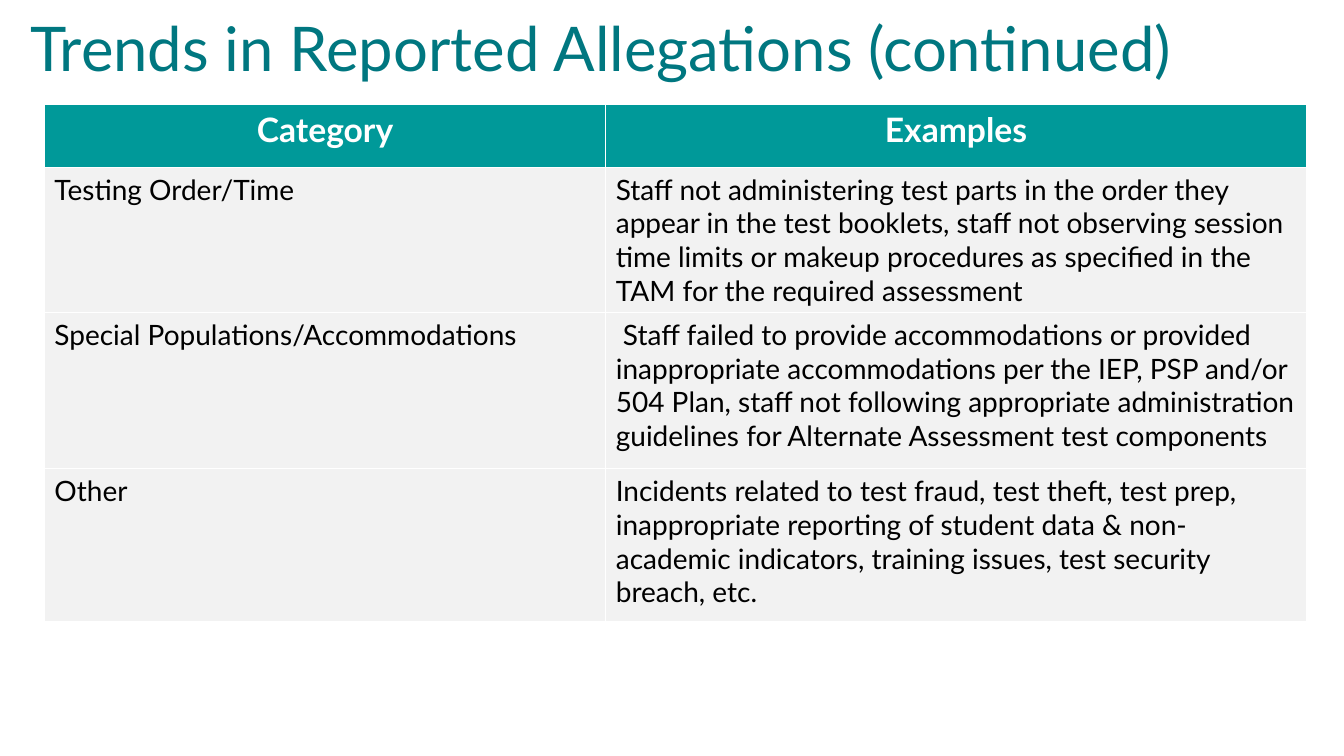
from pptx import Presentation
from pptx.dml.color import RGBColor
from pptx.enum.text import MSO_ANCHOR, MSO_AUTO_SIZE, PP_ALIGN
from pptx.util import Pt

DEEP_TEAL = RGBColor(0x00, 0x77, 0x80)
TEAL = RGBColor(0x00, 0x99, 0x99)
PALE_GREY = RGBColor(0xF2, 0xF2, 0xF2)
WHITE = RGBColor(0xFF, 0xFF, 0xFF)
BLACK = RGBColor(0x00, 0x00, 0x00)

HEADINGS = ("Category", "Examples")
ALLEGATIONS = [
    ("Testing Order/Time",
     "Staff not administering test parts in the order they appear in the test "
     "booklets, staff not observing session time limits or makeup procedures "
     "as specified in the TAM for the required assessment"),
    ("Special Populations/Accommodations",
     " Staff failed to provide accommodations or provided inappropriate "
     "accommodations per the IEP, PSP and/or 504 Plan, staff not following "
     "appropriate administration guidelines for Alternate Assessment test "
     "components"),
    ("Other",
     "Incidents related to test fraud, test theft, test prep, inappropriate "
     "reporting of student data & non-academic indicators, training issues, "
     "test security breach, etc."),
]
COLUMN_WIDTHS = (401, 500.4)
ROW_HEIGHTS = (44.6, 87.8, 111.6, 109.4)

TITLE_FONT = {"name": "Lato", "size": Pt(44), "bold": False}
HEADING_FONT = {"name": "Lato", "size": Pt(24), "bold": True}
BODY_FONT = {"name": "Lato", "size": Pt(20), "bold": False}


def apply(target, values):
    """Set every attribute in values on the target."""
    for attribute, value in values.items():
        setattr(target, attribute, value)


def write(paragraph, words, font, color, align):
    """Fill a paragraph with one formatted run."""
    paragraph.alignment = align
    run = paragraph.add_run()
    run.text = words
    apply(run.font, font)
    run.font.color.rgb = color


def add_title(slide, words):
    """Place and format the title placeholder."""
    title = slide.shapes.title
    apply(title, {"left": Pt(14.4), "top": Pt(10.8),
                  "width": Pt(974.2), "height": Pt(51.8)})
    apply(title.text_frame, {"vertical_anchor": MSO_ANCHOR.MIDDLE,
                             "word_wrap": True,
                             "auto_size": MSO_AUTO_SIZE.NONE})
    heading = title.text_frame.paragraphs[0]
    heading.line_spacing = 0.9
    write(heading, words, TITLE_FONT, DEEP_TEAL, PP_ALIGN.LEFT)


def fill_row(row, texts, fill, font, color, align):
    """Write one table row in a single style."""
    for cell, words in zip(row.cells, texts):
        cell.fill.solid()
        cell.fill.fore_color.rgb = fill
        write(cell.text_frame.paragraphs[0], words, font, color, align)


def add_allegations(slide):
    """Add the table of allegation categories and examples."""
    frame = slide.shapes.add_table(
        len(ROW_HEIGHTS), len(COLUMN_WIDTHS), Pt(31.7), Pt(74.9),
        Pt(sum(COLUMN_WIDTHS)), Pt(sum(ROW_HEIGHTS)))
    table = frame.table
    table.horz_banding = False
    for column, width in zip(table.columns, COLUMN_WIDTHS):
        column.width = Pt(width)
    for row, height in zip(table.rows, ROW_HEIGHTS):
        row.height = Pt(height)
    frame.height = Pt(368.6)
    header, *body = table.rows
    fill_row(header, HEADINGS, TEAL, HEADING_FONT, WHITE, PP_ALIGN.CENTER)
    for row, allegation in zip(body, ALLEGATIONS):
        fill_row(row, allegation, PALE_GREY, BODY_FONT, BLACK, PP_ALIGN.LEFT)


def main():
    """Build and save the slide."""
    deck = Presentation()
    apply(deck, {"slide_width": Pt(960), "slide_height": Pt(540)})
    slide = deck.slides.add_slide(deck.slide_layouts.get_by_name("Title Only"))
    add_title(slide, "Trends in Reported Allegations (continued)")
    add_allegations(slide)
    deck.save("out.pptx")


if __name__ == "__main__":
    main()
